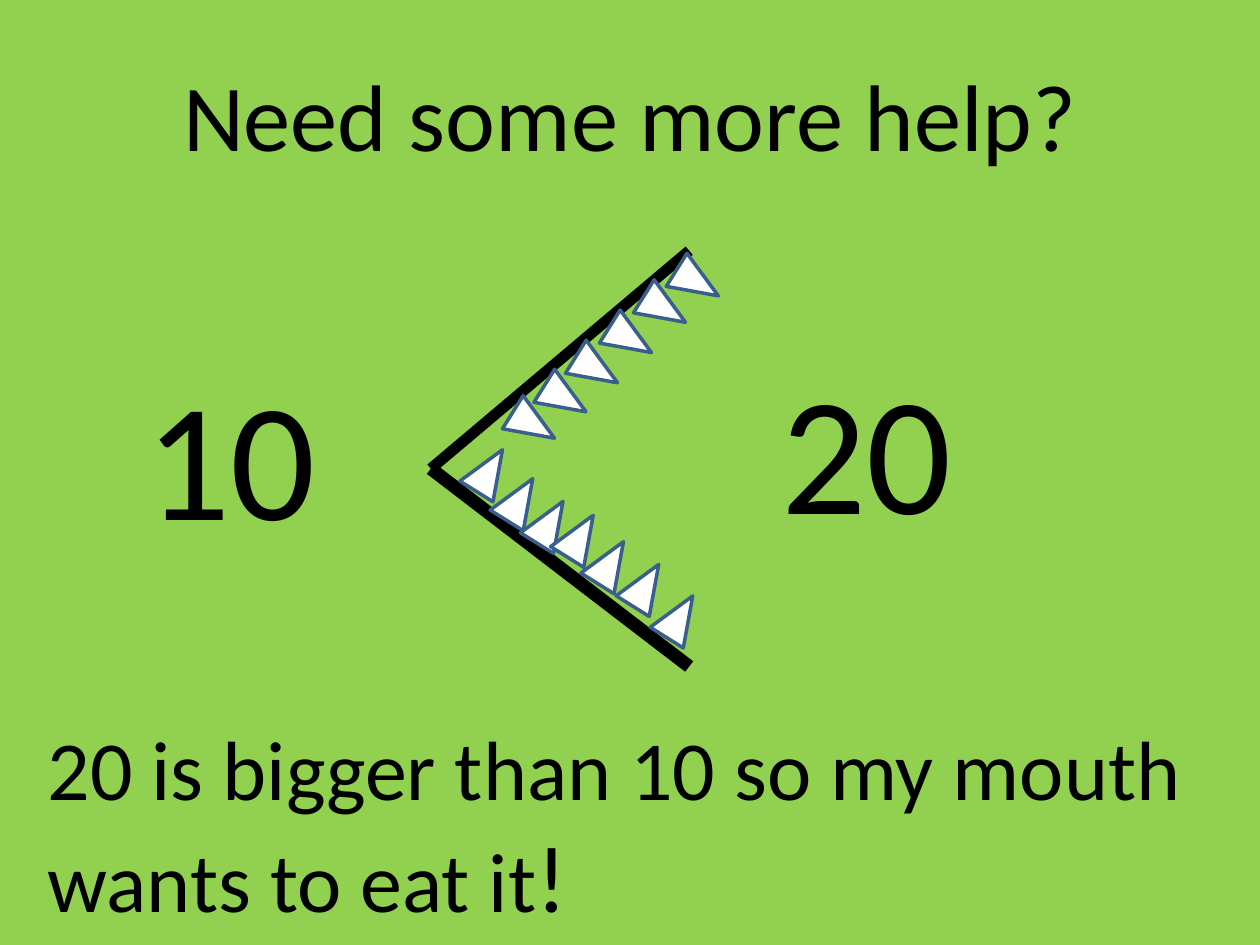
from typing import NamedTuple

from lxml.etree import SubElement
from pptx import Presentation
from pptx.dml.color import RGBColor
from pptx.enum.shapes import MSO_CONNECTOR as Link, MSO_SHAPE as Shape
from pptx.enum.text import MSO_ANCHOR as Anchor, MSO_AUTO_SIZE as Fit, PP_ALIGN as Align
from pptx.oxml.ns import qn
from pptx.util import Inches, Pt

FONT = "Calibri"
BLACK, WHITE, GREEN, BLUE = "000000", "FFFFFF", "92D050", "3A5F8C"
TOOTH_W, TOOTH_H = 0.31, 0.39


class Jaw(NamedTuple):
    start: tuple[float, float]
    end: tuple[float, float]
    weight: float
    turn: float
    teeth: list[tuple[float, float]]


class Label(NamedTuple):
    text: str
    box: tuple[float, float, float, float]
    size: float


HINGE = (3.42, 3.72)
JAWS = [
    Jaw((5.47, 1.99), HINGE, 6.25, 122,
        [(5.12, 2.26), (4.85, 2.5), (4.58, 2.74), (4.33, 2.97), (4.08, 3.18), (5.38, 2.05)]),
    Jaw(HINGE, (5.47, 5.29), 7.5, 32,
        [(3.73, 3.54), (3.97, 3.77), (4.21, 3.95), (4.45, 4.06), (4.69, 4.27),
         (4.97, 4.45), (5.24, 4.7)]),
]
LABELS = [
    Label("20", (6.1, 2.7, 2.05, 1.72), 96),
    Label("10", (1.06, 2.75, 2.05, 1.72), 96),
    Label("20 is bigger than 10 so my mouth wants to eat it", (0.28, 5.64, 9.45, 1.82), 48),
]


def paint(color, code: str) -> None:
    color.rgb = RGBColor.from_string(code)


def style(para, size: float) -> None:
    para.font.name, para.font.size = FONT, Pt(size)
    paint(para.font.color, BLACK)


def add_title(slide, text: str) -> None:
    title = slide.shapes.title
    title.left, title.top, title.width, title.height = map(Inches, (0.5, 0.4, 9, 6.3))
    frame = title.text_frame
    frame.text = text
    frame.auto_size, frame.vertical_anchor = Fit.NONE, Anchor.TOP
    para = frame.paragraphs[0]
    para.alignment = Align.CENTER
    style(para, 54)


def add_edge(group, jaw: Jaw) -> None:
    edge = group.shapes.add_connector(Link.STRAIGHT, *map(Inches, jaw.start + jaw.end))
    edge.line.width = Pt(jaw.weight)
    paint(edge.line.color, BLACK)
    SubElement(edge._element.spPr, qn("a:effectLst"))


def add_tooth(group, x: float, y: float, turn: float) -> None:
    tooth = group.shapes.add_shape(
        Shape.ISOSCELES_TRIANGLE, *map(Inches, (x, y, TOOTH_W, TOOTH_H)))
    tooth.rotation = turn
    tooth.shadow.inherit = False
    tooth.fill.solid()
    paint(tooth.fill.fore_color, WHITE)
    tooth.line.width = Pt(2)
    paint(tooth.line.color, BLUE)


def add_mouth(slide) -> None:
    group = slide.shapes.add_group_shape()
    for jaw in JAWS:
        add_edge(group, jaw)
    for jaw in JAWS:
        for x, y in jaw.teeth:
            add_tooth(group, x, y, jaw.turn)


def add_label(slide, label: Label):
    frame = slide.shapes.add_textbox(*map(Inches, label.box)).text_frame
    frame.word_wrap = True
    frame.auto_size = Fit.SHAPE_TO_FIT_TEXT
    para = frame.paragraphs[0]
    para.add_run().text = label.text
    style(para, label.size)
    return para


def main() -> None:
    deck = Presentation()
    deck.slide_width, deck.slide_height = Inches(10), Inches(7.5)
    slide = deck.slides.add_slide(deck.slide_layouts[5])
    slide.background.fill.solid()
    paint(slide.background.fill.fore_color, GREEN)
    add_title(slide, "Need some more help?")
    add_mouth(slide)
    paras = [add_label(slide, label) for label in LABELS]
    mark = paras[-1].add_run()
    mark.text = "!"
    mark.font.size = Pt(54)
    deck.save("out.pptx")


if __name__ == "__main__":
    main()
